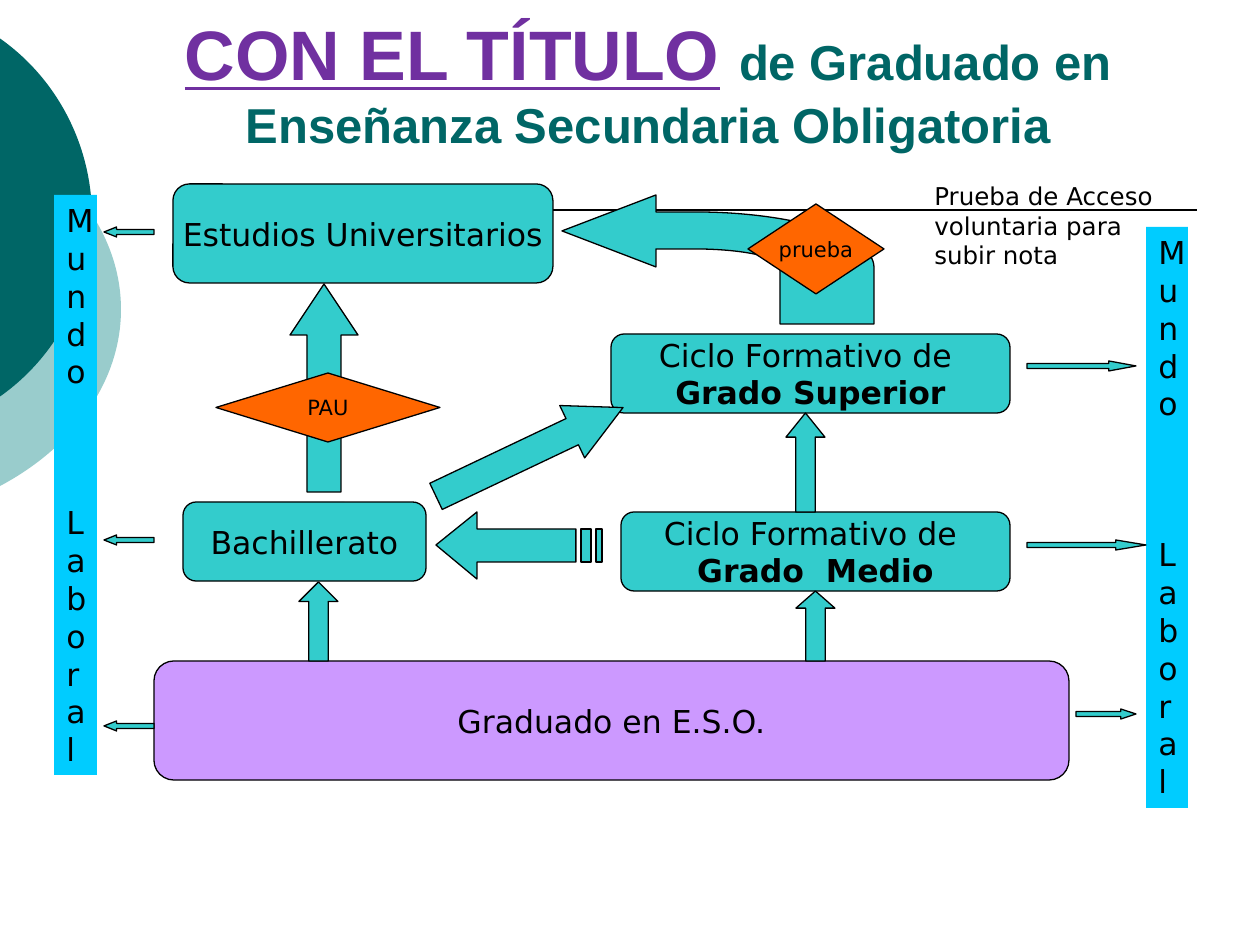
from dataclasses import dataclass
from typing import Any, NamedTuple

from lxml import etree
from pptx import Presentation, util as u
from pptx.dml.color import RGBColor
from pptx.enum import shapes, text
from pptx.oxml.ns import qn

PX = 914400 / 126
Shape = shapes.MSO_SHAPE
Align = text.PP_ALIGN
Anchor = text.MSO_ANCHOR


@dataclass(frozen=True)
class Theme:
    dark_teal: str = "006666"
    pale_teal: str = "99CCCC"
    turquoise: str = "33CCCC"
    purple: str = "7030A0"
    lilac: str = "CC99FF"
    orange: str = "FF6600"
    sky: str = "00CCFF"
    ink: str = "000000"
    heading_font: str = "Arial"
    body_font: str = "DejaVu Sans"
    display: int = 40
    heading: int = 28
    body: int = 18
    note: int = 14
    label: int = 12


THEME = Theme()


class Box(NamedTuple):
    left: int
    top: int
    width: int
    height: int


class Line(NamedTuple):
    words: str
    bold: bool = False


@dataclass(frozen=True)
class Stage:
    box: Box
    lines: tuple[Line, ...]
    kind: Any = Shape.ROUNDED_RECTANGLE
    fill: str = THEME.turquoise
    size: int = THEME.body


class Arrow(NamedTuple):
    kind: Any
    box: Box
    head: float
    rotation: float = 0


DISCS = (
    (Box(-446, 94, 567, 431), THEME.pale_teal),
    (Box(-334, 0, 426, 435), THEME.dark_teal),
)
STAGES = (
    Stage(Box(154, 661, 915, 119), (Line("Graduado en E.S.O."),), fill=THEME.lilac),
    Stage(Box(183, 502, 243, 79), (Line("Bachillerato"),)),
    Stage(Box(173, 184, 380, 99), (Line("Estudios Universitarios"),)),
    Stage(Box(621, 512, 389, 79), (Line("Ciclo Formativo de "), Line("Grado  Medio", True))),
    Stage(Box(611, 334, 399, 79), (Line("Ciclo Formativo de "), Line("Grado Superior", True))),
)
EXAMS = tuple(
    Stage(box, (Line(words),), Shape.DIAMOND, THEME.orange, THEME.label)
    for box, words in ((Box(748, 204, 136, 90), "prueba"), (Box(216, 373, 224, 69), "PAU"))
)
ARROWS = (
    *(Arrow(Shape.LEFT_ARROW, Box(104, top, 50, 10), 1.26) for top in (227, 535, 721)),
    Arrow(Shape.RIGHT_ARROW, Box(1027, 361, 109, 10), 2.71),
    Arrow(Shape.RIGHT_ARROW, Box(1027, 540, 119, 10), 3.02),
    Arrow(Shape.RIGHT_ARROW, Box(1076, 709, 60, 10), 1.51),
    Arrow(Shape.UP_ARROW, Box(290, 284, 68, 208), 0.75),
    Arrow(Shape.UP_ARROW, Box(299, 582, 39, 79), 0.5),
    Arrow(Shape.UP_ARROW, Box(796, 591, 39, 70), 0.44),
    Arrow(Shape.UP_ARROW, Box(786, 413, 39, 99), 0.62),
    Arrow(Shape.RIGHT_ARROW, Box(426, 423, 207, 58), 0.97, 334.6),
)
BANNERS = (Box(1146, 227, 42, 581), Box(54, 195, 43, 580))

# A contour holds (x, y) points and (x1, y1, x2, y2, x, y) Bézier curves.
Contour = list[tuple[int, ...]]
BENT_ARROW: Contour = [
    (562, 231), (656, 195), (656, 212), (694, 212), (794, 212, 874, 237, 874, 267),
    (874, 324), (780, 324), (780, 267), (780, 257, 742, 249, 694, 249),
    (656, 249), (656, 267),
]
STRIPED_ARROW: list[Contour] = [
    [(477, 579), (477, 562), (576, 562), (576, 529), (477, 529), (477, 512), (436, 545)],
    *([(left, 529), (right, 529), (right, 562), (left, 562)]
      for left, right in ((581, 591), (596, 602))),
]


def emu(*lengths: float) -> tuple[int, ...]:
    return tuple(round(length * PX) for length in lengths)


def assign(target: Any, values: dict[str, Any]) -> None:
    for name, value in values.items():
        setattr(target, name, value)


def set_font(font: Any, size: int, color: str = THEME.ink,
             name: str = THEME.body_font, **more: Any) -> None:
    assign(font, {"name": name, "size": u.Pt(size), **more})
    font.color.rgb = RGBColor.from_string(color)


def paint(shape: Any, fill: str, outlined: bool = True) -> None:
    shape.shadow.inherit = False
    shape.fill.solid()
    shape.fill.fore_color.rgb = RGBColor.from_string(fill)
    if outlined:
        shape.line.color.rgb = RGBColor.from_string(THEME.ink)
        shape.line.width = u.Pt(0.75)
    else:
        shape.line.fill.background()


def draw_shape(slide: Any, kind: Any, box: Box, fill: str, outlined: bool = True) -> Any:
    shape = slide.shapes.add_shape(kind, *emu(*box))
    paint(shape, fill, outlined)
    return shape


def bend_segments(shape: Any, steps: Contour) -> None:
    """Turn the straight segments that stand for curves into Bézier segments."""
    for segment, step in zip(list(shape._element.iter(qn("a:lnTo"))), steps):
        if len(step) == 2:
            continue
        segment.tag = qn("a:cubicBezTo")
        segment.clear()
        for x, y in zip(step[::2], step[1::2]):
            x_emu, y_emu = emu(x, y)
            etree.SubElement(segment, qn("a:pt"), x=str(x_emu - shape.left),
                             y=str(y_emu - shape.top))


def draw_outline(slide: Any, contours: list[Contour], fill: str) -> None:
    ends = [[emu(*step[-2:]) for step in contour] for contour in contours]
    builder = slide.shapes.build_freeform(*ends[0][0])
    for i, points in enumerate(ends):
        if i:
            builder.move_to(*points[0])
        builder.add_line_segments(points[1:], close=True)
    shape = builder.convert_to_shape()
    bend_segments(shape, [step for contour in contours for step in contour[1:]])
    paint(shape, fill)


def draw_stage(slide: Any, stage: Stage) -> None:
    frame = draw_shape(slide, stage.kind, stage.box, stage.fill).text_frame
    assign(frame, {"word_wrap": False, "vertical_anchor": Anchor.MIDDLE})
    for i, line in enumerate(stage.lines):
        paragraph = frame.add_paragraph() if i else frame.paragraphs[0]
        assign(paragraph, {"text": line.words, "alignment": Align.CENTER})
        set_font(paragraph.runs[0].font, stage.size, bold=line.bold)


def draw_arrow(slide: Any, arrow: Arrow) -> None:
    shape = draw_shape(slide, arrow.kind, arrow.box, THEME.turquoise)
    shape.adjustments[1] = arrow.head
    shape.rotation = arrow.rotation


def draw_banner(slide: Any, box: Box) -> None:
    """Draw a bar so narrow that its words wrap after every letter."""
    frame = draw_shape(slide, Shape.RECTANGLE, box, THEME.sky, outlined=False).text_frame
    assign(frame, {"word_wrap": True, "vertical_anchor": Anchor.TOP})
    world, labour = frame.paragraphs[0], frame.add_paragraph()
    assign(world, {"text": "Mundo", "alignment": Align.CENTER})
    assign(labour, {"text": "Laboral", "alignment": Align.LEFT, "space_before": u.Pt(64.7)})
    for paragraph in (world, labour):
        set_font(paragraph.runs[0].font, THEME.body)


def draw_rule(slide: Any) -> None:
    rule = slide.shapes.add_connector(shapes.MSO_CONNECTOR.STRAIGHT, *emu(189, 210, 1197, 210))
    rule.line.color.rgb = RGBColor.from_string(THEME.ink)
    rule.line.width = u.Pt(1)
    etree.SubElement(rule._element.spPr, qn("a:effectLst"))


def write_title(slide: Any) -> None:
    title = slide.shapes.title
    assign(title, dict(zip(Box._fields, emu(109, 57, 1092, 103))))
    frame = title.text_frame
    assign(frame, {"word_wrap": True, "vertical_anchor": Anchor.BOTTOM,
                   "auto_size": text.MSO_AUTO_SIZE.NONE})
    paragraph = frame.paragraphs[0]
    paragraph.alignment = Align.CENTER

    def add(words: str, size: int, color: str, underline: bool = False) -> None:
        run = paragraph.add_run()
        run.text = words
        set_font(run.font, size, color, THEME.heading_font, bold=True, underline=underline)

    add("CON EL TÍTULO", THEME.display, THEME.purple, underline=True)
    add(" ", THEME.display, THEME.purple)
    add("de Graduado en ", THEME.heading, THEME.dark_teal)
    paragraph.add_line_break()
    add("Enseñanza Secundaria Obligatoria ", THEME.heading, THEME.dark_teal)


def write_note(slide: Any) -> None:
    frame = slide.shapes.add_textbox(*emu(922, 175, 263, 101)).text_frame
    frame.word_wrap = True
    frame.text = "Prueba de Acceso voluntaria para subir nota"
    set_font(frame.paragraphs[0].runs[0].font, THEME.note)


def main() -> None:
    deck = Presentation()
    assign(deck, {"slide_width": u.Inches(10), "slide_height": u.Inches(7.5)})
    slide = deck.slides.add_slide(deck.slide_layouts[5])
    for box, fill in DISCS:
        draw_shape(slide, Shape.OVAL, box, fill, outlined=False)
    draw_rule(slide)
    write_title(slide)
    for stage in STAGES:
        draw_stage(slide, stage)
    for box in BANNERS:
        draw_banner(slide, box)
    for arrow in ARROWS:
        draw_arrow(slide, arrow)
    draw_outline(slide, [BENT_ARROW], THEME.turquoise)
    draw_outline(slide, STRIPED_ARROW, THEME.turquoise)
    for exam in EXAMS:
        draw_stage(slide, exam)
    write_note(slide)
    deck.save("out.pptx")


if __name__ == "__main__":
    main()
